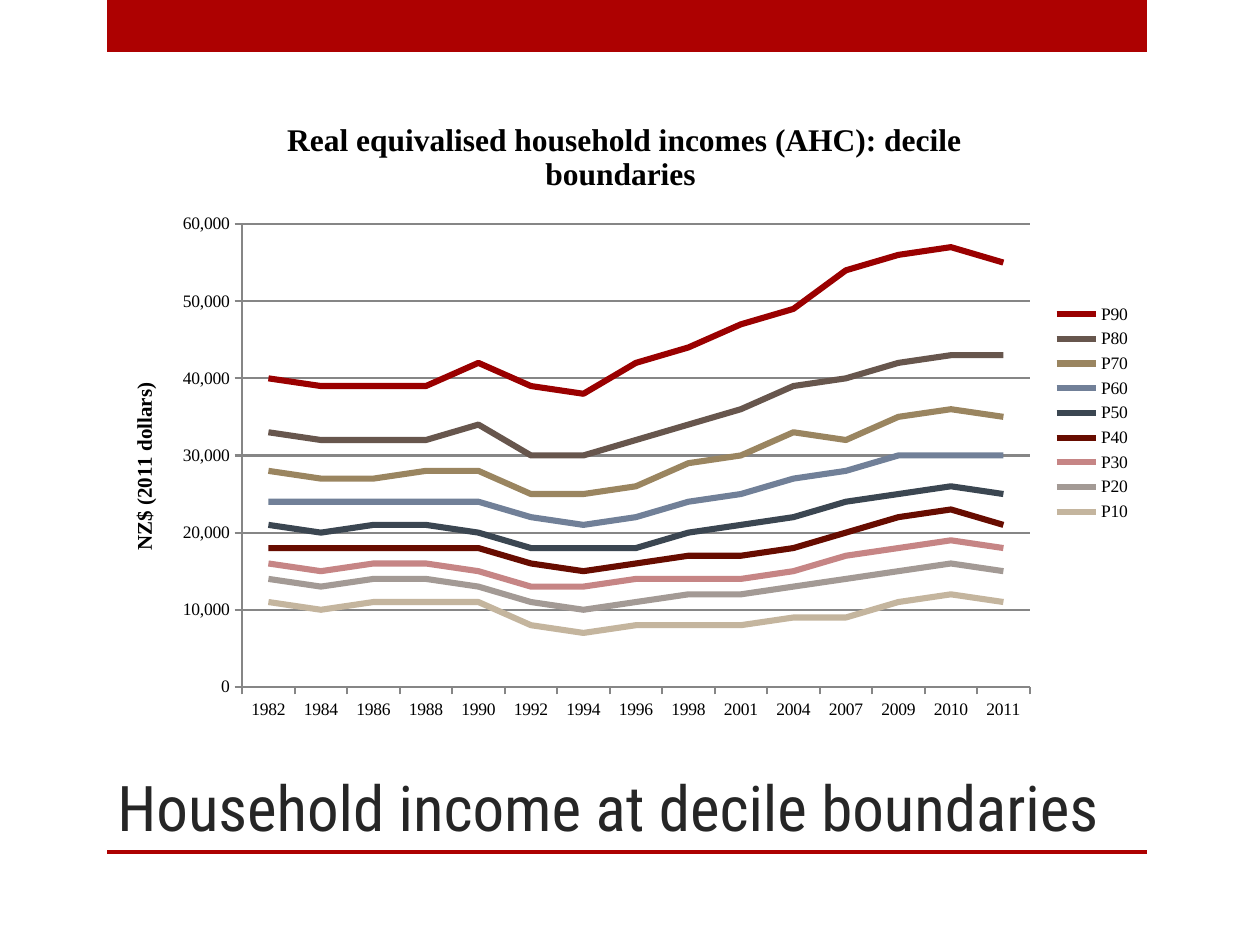
import pptx
import pptx.chart.data
import pptx.dml.color
import pptx.enum.chart
import pptx.enum.text
import pptx.oxml
import pptx.oxml.ns
import pptx.util

PX = 914400 // 126
COLORS = {
    "band": "AD0101", "title": "262626", "text": "000000", "axis": "868686",
    "P90": "9A0000", "P80": "67564D", "P70": "9A8560",
    "P60": "718098", "P50": "3B4651", "P40": "670C00",
    "P30": "C68585", "P20": "A39A95", "P10": "C4B59E",
}
YEARS = [1982, 1984, 1986, 1988, 1990, 1992, 1994, 1996,
         1998, 2001, 2004, 2007, 2009, 2010, 2011]
# Incomes in thousands of dollars
INCOMES = {
    "P90": [40, 39, 39, 39, 42, 39, 38, 42, 44, 47, 49, 54, 56, 57, 55],
    "P80": [33, 32, 32, 32, 34, 30, 30, 32, 34, 36, 39, 40, 42, 43, 43],
    "P70": [28, 27, 27, 28, 28, 25, 25, 26, 29, 30, 33, 32, 35, 36, 35],
    "P60": [24, 24, 24, 24, 24, 22, 21, 22, 24, 25, 27, 28, 30, 30, 30],
    "P50": [21, 20, 21, 21, 20, 18, 18, 18, 20, 21, 22, 24, 25, 26, 25],
    "P40": [18, 18, 18, 18, 18, 16, 15, 16, 17, 17, 18, 20, 22, 23, 21],
    "P30": [16, 15, 16, 16, 15, 13, 13, 14, 14, 14, 15, 17, 18, 19, 18],
    "P20": [14, 13, 14, 14, 13, 11, 10, 11, 12, 12, 13, 14, 15, 16, 15],
    "P10": [11, 10, 11, 11, 11, 8, 7, 8, 8, 8, 9, 9, 11, 12, 11],
}


def rgb(name):
    return pptx.dml.color.RGBColor.from_string(COLORS[name])


def set_title(owner, text, size):
    tf = owner.text_frame
    tf.text = text
    font = tf.paragraphs[0].runs[0].font
    font.name, font.size, font.bold = "Times New Roman", pptx.util.Pt(size), True
    font.color.rgb = rgb("text")


prs = pptx.Presentation()
prs.slide_width, prs.slide_height = pptx.util.Inches(10), pptx.util.Inches(7.5)
s = prs.slides.add_slide(prs.slide_layouts[6])

# Top band and bottom rule
for top, height in ((0, 52), (850, 4)):
    sp = s.shapes.add_shape(1, 107 * PX, top * PX, 1040 * PX, height * PX)
    sp.shadow.inherit = False
    sp.fill.solid()
    sp.fill.fore_color.rgb = rgb("band")
    sp.line.fill.background()

# Slide title
tb = s.shapes.add_textbox(105 * PX, 730 * PX, 1068 * PX, 120 * PX)
tf = tb.text_frame
tf.word_wrap = True
tf.vertical_anchor = pptx.enum.text.MSO_ANCHOR.BOTTOM
p = tf.paragraphs[0]
p.text = "Household income at decile boundaries"
p.font.name, p.font.size = "Roboto Condensed", pptx.util.Pt(36)
p.font.color.rgb = rgb("title")

# Line chart
data = pptx.chart.data.CategoryChartData(number_format="#,##0")
data.categories = [str(year) for year in YEARS]
for name, thousands in INCOMES.items():
    data.add_series(name, [1000 * v for v in thousands])
chart = s.shapes.add_chart(pptx.enum.chart.XL_CHART_TYPE.LINE,
                           105 * PX, 95 * PX, 1039 * PX, 636 * PX, data).chart
chart.font.name, chart.font.size = "Times New Roman", pptx.util.Pt(10)
chart.font.color.rgb = rgb("text")
chart.has_title = True
set_title(chart.chart_title, "Real equivalised household incomes (AHC): decile boundaries ", 18)
chart.has_legend = True
chart.legend.position = pptx.enum.chart.XL_LEGEND_POSITION.RIGHT
chart.legend.include_in_layout = False
chart.plots[0].vary_by_categories = False
for series in chart.plots[0].series:
    series.smooth = False
    series.marker.style = pptx.enum.chart.XL_MARKER_STYLE.NONE
    series.format.line.width = pptx.util.Pt(3.5)
    series.format.line.color.rgb = rgb(series.name)

# Axes and gridlines
val = chart.value_axis
val.minimum_scale, val.maximum_scale, val.major_unit = 0, 60000, 10000
val.has_major_gridlines = True
val.tick_labels.number_format = "#,##0"
val.tick_labels.number_format_is_linked = False
set_title(val.axis_title, "NZ$ (2011 dollars)", 12)
for axis in (val, chart.category_axis):
    axis.major_tick_mark = pptx.enum.chart.XL_TICK_MARK.OUTSIDE
for part in (val, chart.category_axis, val.major_gridlines):
    part.format.line.color.rgb = rgb("axis")
    part.format.line.width = pptx.util.Pt(1.25)

# Fixed position of the plot area, as fractions of the chart
plot_area = chart.plots[0]._element.getparent()
for old in plot_area.findall(pptx.oxml.ns.qn("c:layout")):
    plot_area.remove(old)
fractions = {"x": 137 / 1039, "y": 129 / 636, "w": 788 / 1039, "h": 463 / 636}
places = "".join(f'<c:{k} val="{v:.3f}"/>' for k, v in fractions.items())
plot_area.insert(0, pptx.oxml.parse_xml(
    f'<c:layout {pptx.oxml.ns.nsdecls("c")}><c:manualLayout>'
    '<c:layoutTarget val="inner"/><c:xMode val="edge"/><c:yMode val="edge"/>'
    f'{places}</c:manualLayout></c:layout>'))

prs.save("out.pptx")
